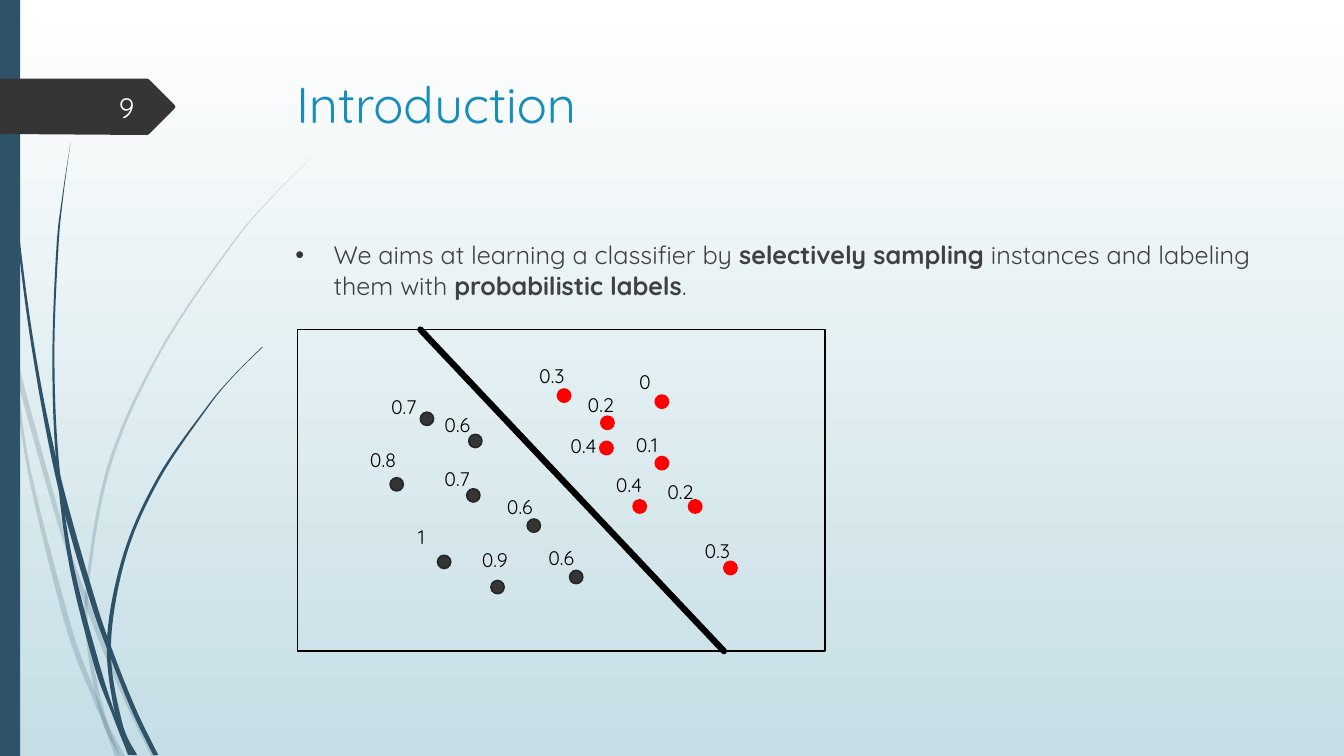
from lxml import etree
from pptx import Presentation
from pptx.dml.color import RGBColor
from pptx.enum.shapes import MSO_CONNECTOR as CONN, MSO_SHAPE as SHAPE
from pptx.enum.text import MSO_ANCHOR as ANCHOR, PP_ALIGN as ALIGN
from pptx.oxml.ns import qn
from pptx.util import Inches, Pt

FONT = "Quicksand"
NAVY, CHARCOAL, BLACK, RED = "2E5369", "353535", "000000", "FF0000"

TITLE = "Introduction"
PAGE = "9"
BODY = [
    ("We aims at learning a classifier by ", False),
    ("selectively sampling", True),
    (" instances and labeling them with ", False),
    ("probabilistic labels", True),
    (".", False),
]

# value, dot left, dot top, label left, label top, label width
DARK_DOTS = [
    ("0.8", 3.87, 4.74, 3.57, 4.39, 0.5),
    ("1", 4.34, 5.51, 4.05, 5.16, 0.46),
    ("0.7", 4.17, 4.09, 3.78, 3.87, 0.52),
    ("0.9", 4.87, 5.76, 4.68, 5.39, 0.49),
    ("0.6", 4.65, 4.31, 4.31, 4.05, 0.55),
    ("0.7", 4.63, 4.85, 4.31, 4.58, 0.53),
    ("0.6", 5.23, 5.15, 4.93, 4.86, 0.57),
    ("0.6", 5.65, 5.66, 5.34, 5.37, 0.53),
]
RED_DOTS = [
    ("0.3", 5.53, 3.86, 5.25, 3.56, 0.53),
    ("0.4", 5.95, 4.38, 5.56, 4.26, 0.53),
    ("0.4", 6.28, 4.96, 6.01, 4.64, 0.51),
    ("0.2", 6.83, 4.96, 6.52, 4.71, 0.56),
    ("0.3", 7.18, 5.57, 6.89, 5.3, 0.51),
    ("0", 6.5, 3.92, 6.24, 3.62, 0.46),
    ("0.2", 5.96, 4.13, 5.73, 3.85, 0.55),
    ("0.1", 6.5, 4.53, 6.21, 4.25, 0.57),
]

PALE_STEMS = [
    ([(0, 2.82), (0.14, 3.45), (0.62, 5.2), (0.88, 5.96), (1.27, 6.92), (1.55, 7.5)],
     [(0, 2.99), (0.17, 3.76), (0.58, 5.22), (0.88, 6.1), (1.23, 6.94), (1.5, 7.5)]),
    ([(0.11, 3.5), (0.17, 3.76), (0.31, 4.69), (0.7, 6.19), (0.93, 6.83), (1.19, 7.5)],
     [(0.11, 3.5), (0.28, 4.7), (0.65, 6.21), (0.92, 6.93), (1.01, 7.14), (1.14, 7.5)]),
    ([(3.12, 1.53), (2.68, 1.98), (2.29, 2.45), (1.6, 3.49), (1.1, 4.62),
      (0.88, 5.84), (0.91, 6.46), (1.05, 7.11), (1.24, 7.5)],
     [(3.12, 1.53), (2.68, 1.97), (2.28, 2.44), (1.58, 3.48), (1.07, 4.61),
      (0.85, 5.84), (0.87, 6.46), (1.01, 7.14), (1.19, 7.5)]),
]
DARK_STEMS = [
    ([(0.04, 0), (0.08, 1.09), (0.19, 2.32), (0.36, 3.55), (0.6, 4.72),
      (0.93, 5.9), (1.13, 6.49), (1.36, 7.06), (1.57, 7.49)],
     [(0.03, 0), (0.07, 1.1), (0.17, 2.33), (0.33, 3.55), (0.57, 4.81),
      (0.88, 5.92), (1.11, 6.56), (1.32, 7.08), (1.52, 7.49)]),
    ([(0.7, 1.41), (0.63, 1.93), (0.58, 2.45), (0.54, 3.49), (0.58, 4.53),
      (0.72, 5.56), (0.98, 6.57), (1.17, 7.16), (1.31, 7.49)],
     [(0.7, 1.41), (0.62, 1.93), (0.56, 2.45), (0.52, 3.49), (0.55, 4.49),
      (0.68, 5.57), (0.93, 6.59), (1.11, 7.08), (1.27, 7.49)]),
    ([(2.61, 3.44), (2.31, 3.74), (2.05, 4.06), (1.58, 4.76), (1.25, 5.52),
      (1.1, 6.41), (1.21, 7.16), (1.36, 7.49)],
     [(2.6, 3.44), (2.31, 3.73), (2.04, 4.05), (1.56, 4.74), (1.22, 5.51),
      (1.06, 6.38), (1.16, 7.17), (1.3, 7.49)]),
]
PAGE_TAG = [(0, 0.78), (1.46, 0.78), (1.48, 0.79), (1.73, 1.04), (1.74, 1.06),
            (1.73, 1.08), (1.48, 1.33), (1.46, 1.34), (0, 1.33)]


def rgb(color):
    return RGBColor.from_string(color)


def style(sp, fill=None, line=None, width=1.25):
    sp.shadow.inherit = False
    if fill:
        sp.fill.solid()
        sp.fill.fore_color.rgb = rgb(fill)
    else:
        sp.fill.background()
    if line:
        sp.line.color.rgb = rgb(line)
        sp.line.width = Pt(width)
    else:
        sp.line.fill.background()
    return sp


def add_preset(kind, box, **look):
    return style(slide.shapes.add_shape(kind, *map(Inches, box)), **look)


def add_outline(points, fill):
    corners = [(Inches(x), Inches(y)) for x, y in points]
    builder = slide.shapes.build_freeform(*corners[0])
    builder.add_line_segments(corners[1:], close=True)
    return style(builder.convert_to_shape(), fill)


def bend_edge(segments, knots):
    padded = [knots[0], *knots, knots[-1]]
    for seg, a, b, c, d in zip(segments, padded, padded[1:], padded[2:], padded[3:]):
        leave = [q + (r - p) / 6 for p, q, r in zip(a, b, c)]
        arrive = [q - (r - p) / 6 for p, q, r in zip(b, c, d)]
        curve = etree.Element(qn("a:cubicBezTo"))
        for x, y in (leave, arrive, c):
            etree.SubElement(curve, qn("a:pt"), x=str(round(x)), y=str(round(y)))
        seg.getparent().replace(seg, curve)


def add_stem(right, left):
    sp = add_outline(right + left[::-1], NAVY)
    outline = next(sp._element.iter(qn("a:pathLst")))[0]
    knots = [(int(pt.get("x")), int(pt.get("y"))) for pt in outline.iter(qn("a:pt"))]
    segments = outline.findall(qn("a:lnTo"))
    n = len(right)
    bend_edge(segments[:n - 1], knots[:n])
    bend_edge(segments[n:], knots[n:n + len(left)])
    return sp


def add_text(runs, box, size, color, align=ALIGN.LEFT, anchor=ANCHOR.TOP):
    tf = slide.shapes.add_textbox(*map(Inches, box)).text_frame
    tf.word_wrap = True
    tf.vertical_anchor = anchor
    p = tf.paragraphs[0]
    p.alignment = align
    p.font.name, p.font.size, p.font.color.rgb = FONT, Pt(size), rgb(color)
    for text, bold in runs:
        r = p.add_run()
        r.text = text
        r.font.bold = bold
    return p


def add_bullet(p, indent, color):
    pPr = p._p.get_or_add_pPr()
    pPr.set("marL", str(Inches(indent)))
    pPr.set("indent", str(-Inches(indent)))
    bullet_color = etree.Element(qn("a:buClr"))
    etree.SubElement(bullet_color, qn("a:srgbClr"), val=color)
    bullet_font = etree.Element(qn("a:buFont"), typeface="Arial")
    bullet = etree.Element(qn("a:buChar"), char="•")
    for el in (bullet_color, bullet_font, bullet):
        pPr.insert_element_before(el, "a:tabLst", "a:defRPr", "a:extLst")


prs = Presentation()
prs.slide_width, prs.slide_height = Inches(13.33), Inches(7.5)
slide = prs.slides.add_slide(prs.slide_layouts[6])

background = slide.background.fill
background.gradient()
background.gradient_angle = 270
for stop, color in zip(background.gradient_stops, ("FFFFFF", "C5DEE5")):
    stop.color.rgb = rgb(color)

for edges in PALE_STEMS:
    stem = add_stem(*edges)
    tint = stem._element.spPr.find(qn("a:solidFill"))[0]
    etree.SubElement(tint, qn("a:alpha"), val="20000")
for edges in DARK_STEMS:
    add_stem(*edges)
add_preset(SHAPE.RECTANGLE, (0, 0, 0.2, 7.5), fill=NAVY)
add_outline(PAGE_TAG, CHARCOAL)

add_text([(TITLE, False)], (2.84, 0.68, 9.75, 1.4), 36, "178DBB")
body = add_text(BODY, (2.83, 2.33, 9.75, 4.13), 18, "404040")
body.space_before = Pt(10)
add_bullet(body, 0.38, CHARCOAL)

add_preset(SHAPE.RECTANGLE, (2.95, 3.27, 5.23, 3.19), line=BLACK)
boundary = slide.shapes.add_connector(
    CONN.STRAIGHT, *map(Inches, (4.17, 3.27, 7.18, 6.46)))
boundary.line.color.rgb = rgb(BLACK)
boundary.line.width = Pt(4.5)
boundary._element.spPr.find(qn("a:ln")).set("cap", "rnd")
etree.SubElement(boundary._element.spPr, qn("a:effectLst"))

for dots, fill, line in ((DARK_DOTS, CHARCOAL, "272727"), (RED_DOTS, RED, RED)):
    for value, x, y, label_x, label_y, label_w in dots:
        add_preset(SHAPE.OVAL, (x, y, 0.13, 0.13), fill=fill, line=line)
        add_text([(value, False)], (label_x, label_y, label_w, 0.34), 14, BLACK)

add_text([(PAGE, False)], (0.58, 0.86, 0.85, 0.4), 20, "FEFFFF",
         ALIGN.RIGHT, ANCHOR.MIDDLE)

prs.save("out.pptx")
